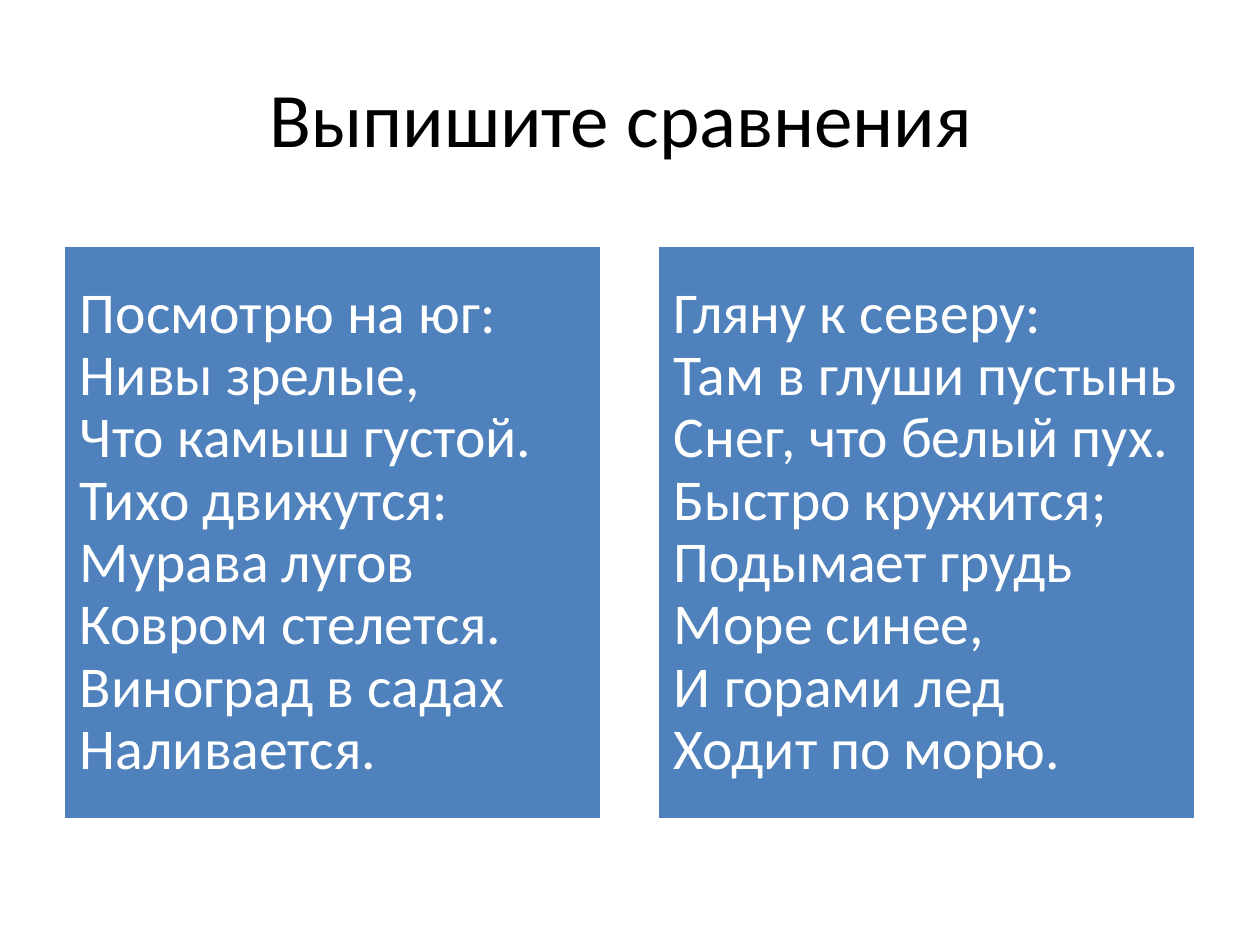
import pptx
import pptx.util
import pptx.dml.color
import pptx.enum.shapes
import pptx.enum.text

WHITE = pptx.dml.color.RGBColor(0xFF, 0xFF, 0xFF)
BLACK = pptx.dml.color.RGBColor(0, 0, 0)
BLUE = pptx.dml.color.RGBColor(0x4F, 0x81, 0xBD)
ALIGN = pptx.enum.text.PP_ALIGN

SOUTH = """Посмотрю на юг:
Нивы зрелые,
Что камыш густой.
Тихо движутся:
Мурава лугов
Ковром стелется.
Виноград в садах
Наливается."""
NORTH = """Гляну к северу:
Там в глуши пустынь
Снег, что белый пух.
Быстро кружится;
Подымает грудь
Море синее,
И горами лед
Ходит по морю."""


def px(n):
    return pptx.util.Emu(round(n * 914400 / 126))


def write(shape, text, size, color, align, inset):
    """Fill the shape with one paragraph, centred vertically."""
    frame = shape.text_frame
    frame.word_wrap = True
    frame.vertical_anchor = pptx.enum.text.MSO_ANCHOR.MIDDLE
    frame.margin_left = frame.margin_right = px(inset)
    frame.margin_top = frame.margin_bottom = px(inset)
    para = frame.paragraphs[0]
    para.text = text
    para.alignment = align
    para.font.name = "Calibri"
    para.font.size = pptx.util.Pt(size)
    para.font.color.rgb = color
    return para


def add_title(slide, box, text):
    shape = slide.shapes.add_textbox(*map(px, box))
    write(shape, text, 44, BLACK, ALIGN.CENTER, 6)


def add_verse(slide, box, text):
    kind = pptx.enum.shapes.MSO_SHAPE.RECTANGLE
    shape = slide.shapes.add_shape(kind, *map(px, box))
    shape.shadow.inherit = False
    shape.fill.solid()
    shape.fill.fore_color.rgb = BLUE
    shape.line.color.rgb = WHITE
    shape.line.width = pptx.util.Pt(2)
    para = write(shape, text, 33, WHITE, ALIGN.LEFT, 17)
    para.line_spacing = 0.9


def add_verses(slide, box, verses, gap):
    """Set the verses side by side in equal columns."""
    left, top, width, height = box
    step = (width + gap) / len(verses)
    for i, verse in enumerate(verses):
        add_verse(slide, (left + i * step, top, step - gap, height), verse)


def main():
    deck = pptx.Presentation()
    deck.slide_width, deck.slide_height = px(1260), px(945)
    slide = deck.slides.add_slide(deck.slide_layouts[6])
    add_title(slide, (63, 38, 1134, 157), "Выпишите сравнения ")
    add_verses(slide, (63, 245, 1133, 575), (SOUTH, NORTH), 55)
    deck.save("out.pptx")


if __name__ == "__main__":
    main()
